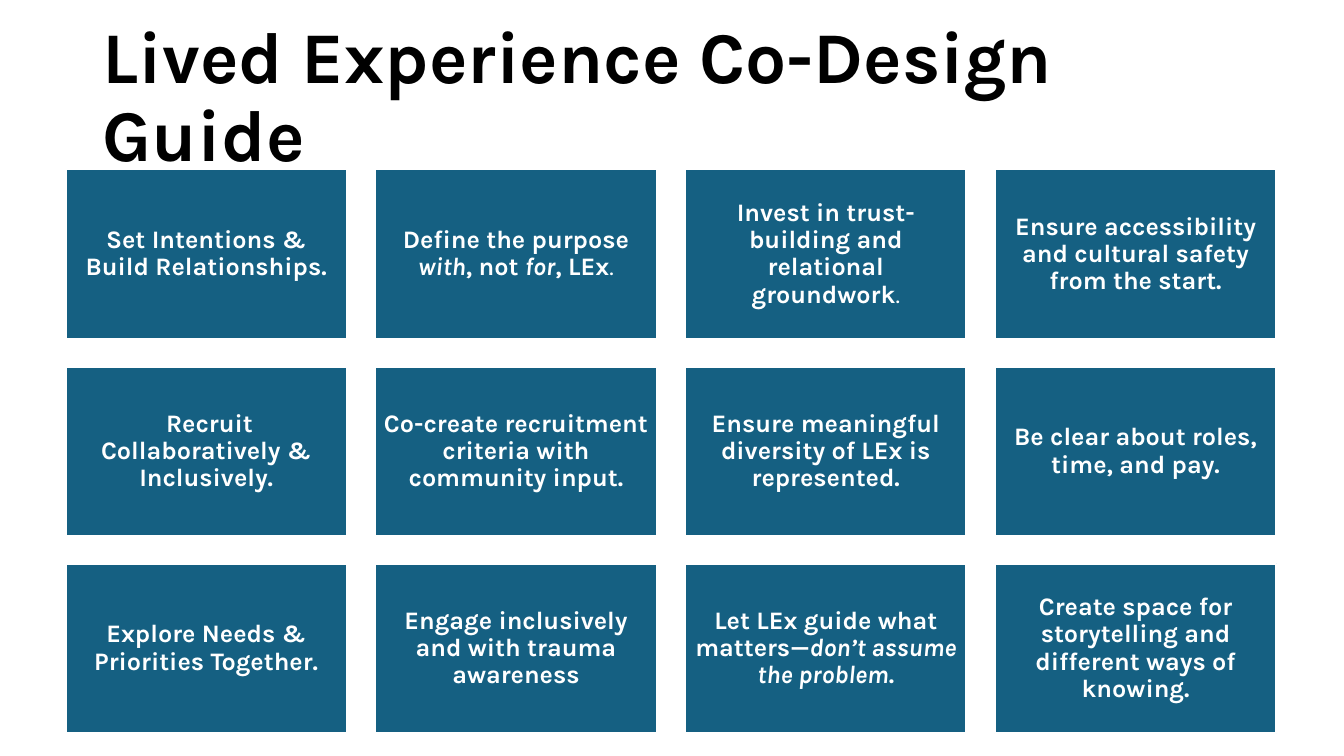
from dataclasses import dataclass

from pptx import Presentation
from pptx.dml.color import RGBColor
from pptx.enum.shapes import MSO_SHAPE
from pptx.enum.text import MSO_ANCHOR, MSO_AUTO_SIZE, PP_ALIGN
from pptx.slide import Slide
from pptx.text.text import Font
from pptx.util import Pt

FONT = "Karla"
WHITE = "FFFFFF"
BLACK = "000000"
TEAL = "156082"

GRID_LEFT, GRID_TOP = 46.8, 121
COLUMN_STEP, ROW_STEP = 221.28, 140.8
TILE_WIDTH, TILE_HEIGHT = 201, 121
TILE_MARGIN = 5


@dataclass(frozen=True)
class Span:
    text: str
    bold: bool = True
    italic: bool = False


@dataclass(frozen=True)
class Tile:
    spans: tuple[Span, ...]


def tile(*parts: str | Span) -> Tile:
    """Make a tile, taking plain strings as bold upright spans."""
    return Tile(tuple(Span(p) if isinstance(p, str) else p for p in parts))


ROWS = [
    [
        tile("Set Intentions & Build Relationships."),
        tile("Define the purpose ", Span("with", italic=True), ", not ",
             Span("for", italic=True), ", LEx", Span(".", bold=False)),
        tile("Invest in trust-building and relational groundwork",
             Span(".", bold=False)),
        tile("Ensure accessibility and cultural safety from the start."),
    ],
    [
        tile(" Recruit Collaboratively & Inclusively."),
        tile("Co-create recruitment criteria with community input."),
        tile("Ensure meaningful diversity of LEx is represented."),
        tile("Be clear about roles, time, and pay."),
    ],
    [
        tile("Explore Needs & Priorities Together."),
        tile("Engage inclusively and with trauma awareness"),
        tile("Let LEx guide what matters—",
             Span("don’t assume the problem", italic=True), "."),
        tile("Create space for storytelling and different ways of knowing."),
    ],
]


def color(value: str) -> RGBColor:
    return RGBColor.from_string(value)


def format_font(font: Font, size: float, fill: str,
                bold: bool = True, italic: bool = False) -> None:
    font.name = FONT
    font.size = Pt(size)
    font.color.rgb = color(fill)
    font.bold = bold
    font.italic = italic


def set_title(s: Slide, text: str) -> None:
    sp = s.shapes.title
    sp.left, sp.top, sp.width, sp.height = Pt(66.2), Pt(28.8), Pt(828), Pt(83.5)
    tf = sp.text_frame
    tf.text = text
    tf.word_wrap = True
    tf.auto_size = MSO_AUTO_SIZE.NONE
    tf.vertical_anchor = MSO_ANCHOR.MIDDLE
    p = tf.paragraphs[0]
    p.alignment = PP_ALIGN.LEFT
    p.line_spacing = 0.9
    format_font(p.runs[0].font, 52, BLACK)


def add_tile(s: Slide, item: Tile, left: float, top: float) -> None:
    sp = s.shapes.add_shape(MSO_SHAPE.RECTANGLE, Pt(left), Pt(top),
                            Pt(TILE_WIDTH), Pt(TILE_HEIGHT))
    sp.shadow.inherit = False
    sp.fill.solid()
    sp.fill.fore_color.rgb = color(TEAL)
    sp.line.color.rgb = color(WHITE)
    sp.line.width = Pt(1.5)

    tf = sp.text_frame
    tf.word_wrap = True
    tf.vertical_anchor = MSO_ANCHOR.MIDDLE
    tf.margin_left = tf.margin_right = Pt(TILE_MARGIN)
    tf.margin_top = tf.margin_bottom = Pt(TILE_MARGIN)
    p = tf.paragraphs[0]
    p.alignment = PP_ALIGN.CENTER
    p.line_spacing = 0.9
    for span in item.spans:
        r = p.add_run()
        r.text = span.text
        format_font(r.font, 18, WHITE, span.bold, span.italic)


def main() -> None:
    prs = Presentation()
    prs.slide_width, prs.slide_height = Pt(960), Pt(540)
    s = prs.slides.add_slide(prs.slide_layouts.get_by_name("Title Only"))
    set_title(s, "Lived Experience Co-Design Guide")
    for row, tiles in enumerate(ROWS):
        for column, item in enumerate(tiles):
            add_tile(s, item, GRID_LEFT + column * COLUMN_STEP,
                     GRID_TOP + row * ROW_STEP)
    prs.save("out.pptx")


if __name__ == "__main__":
    main()
